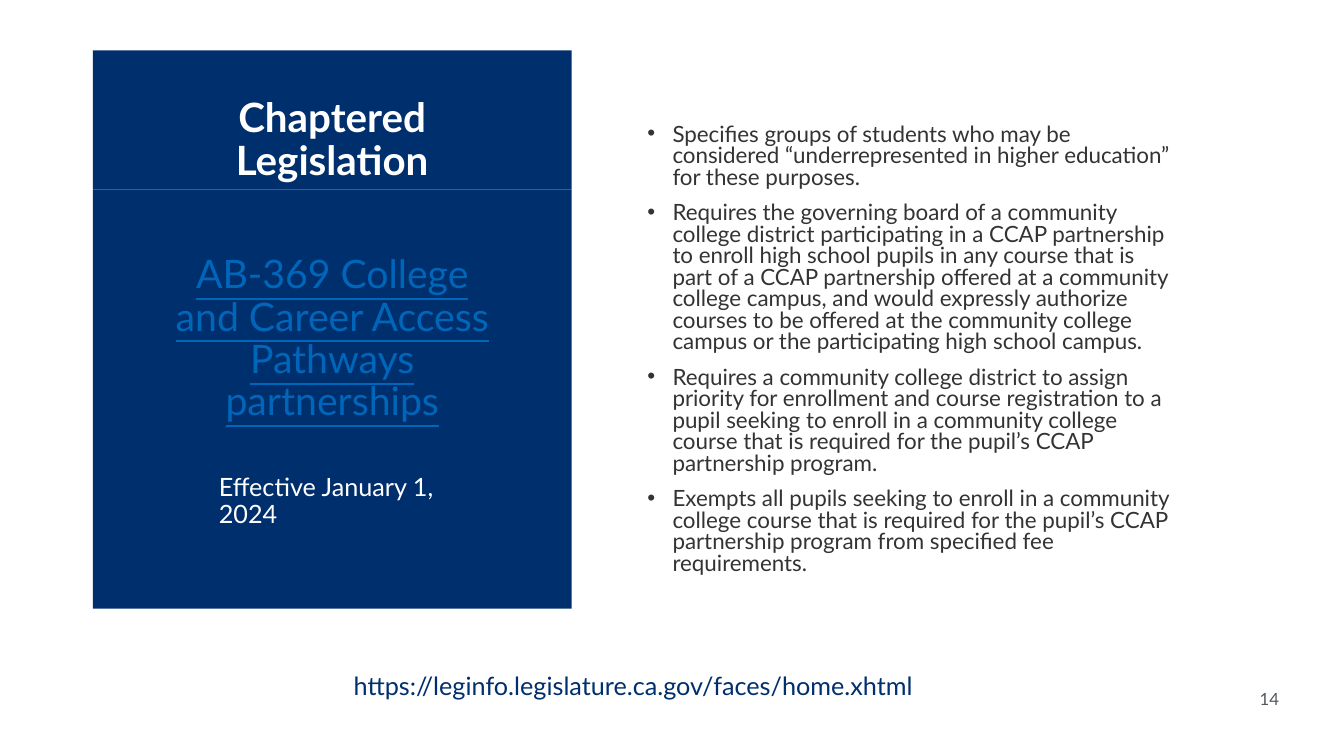
"""Build the chaptered legislation slide for AB-369."""
from lxml import etree
from pptx import Presentation
from pptx.dml.color import RGBColor
from pptx.enum.text import MSO_ANCHOR, MSO_AUTO_SIZE, PP_ALIGN
from pptx.oxml.ns import qn
from pptx.util import Inches, Pt

TITLE = "Chaptered Legislation"
BILL = "AB-369 College and Career Access Pathways partnerships"
EFFECTIVE = "Effective January 1, 2024"
POINTS = [
    "Specifies groups of students who may be considered “underrepresented in higher education” for these purposes.",
    "Requires the governing board of a community college district participating in a CCAP partnership "
    "to enroll high school pupils in any course that is part of a CCAP partnership offered at a community "
    "college campus, and would expressly authorize courses to be offered at the community college campus "
    "or the participating high school campus.",
    "Requires a community college district to assign priority for enrollment and course registration to a "
    "pupil seeking to enroll in a community college course that is required for the pupil’s CCAP "
    "partnership program.",
    "Exempts all pupils seeking to enroll in a community college course that is required for the pupil’s "
    "CCAP partnership program from specified fee requirements.",
]
URL = "https://leginfo.legislature.ca.gov/faces/home.xhtml"
PAGE = "14"

FONT = "Lato"
NAVY = RGBColor(0x00, 0x2F, 0x6D)
BLUE = RGBColor(0x00, 0x66, 0xBA)
WHITE = RGBColor(0xFF, 0xFF, 0xFF)
DARK = RGBColor(0x33, 0x33, 0x33)
GRAY = RGBColor(0x53, 0x57, 0x5A)

PANEL_LEFT, PANEL_TOP, PANEL_WIDTH = 0.92, 0.5, 4.75
TITLE_HEIGHT, BILL_HEIGHT = 1.38, 4.16
BILL_TOP = PANEL_TOP + TITLE_HEIGHT
POINTS_TOP = 1.19
POINTS_HEIGHT = BILL_TOP + BILL_HEIGHT - POINTS_TOP


def place(sp, left, top, width, height, insets=(0.1, 0.05, 0.1, 0.05), anchor=MSO_ANCHOR.TOP, fill=None):
    """Position a shape and prepare its text frame."""
    sp.left, sp.top, sp.width, sp.height = map(Inches, (left, top, width, height))
    if fill is not None:
        sp.fill.solid()
        sp.fill.fore_color.rgb = fill
    tf = sp.text_frame
    tf.word_wrap = True
    tf.auto_size = MSO_AUTO_SIZE.NONE
    tf.vertical_anchor = anchor
    tf.margin_left, tf.margin_top, tf.margin_right, tf.margin_bottom = map(Inches, insets)
    return tf


def write(p, text, size, color, align=PP_ALIGN.LEFT, spacing=1.0, before=0, bold=False, underline=False):
    """Format a paragraph and add its run."""
    p.alignment = align
    p.line_spacing = spacing
    p.space_before = Pt(before)
    r = p.add_run()
    r.text = text
    r.font.name = FONT
    r.font.size = Pt(size)
    r.font.color.rgb = color
    r.font.bold = bold
    r.font.underline = underline


def indent(p, margin, first=0.0, bullet=None):
    """Set paragraph indents and an optional bullet."""
    pPr = p._p.get_or_add_pPr()
    pPr.set("marL", str(Inches(margin)))
    pPr.set("indent", str(Inches(first)))
    if bullet:
        etree.SubElement(pPr, qn("a:buFont")).set("typeface", "Arial")
        etree.SubElement(pPr, qn("a:buChar")).set("char", bullet)


def main():
    """Create and save the slide."""
    prs = Presentation()
    prs.slide_width, prs.slide_height = Inches(13.33), Inches(7.5)
    s = prs.slides.add_slide(prs.slide_layouts[5])

    tf = place(s.shapes.title, PANEL_LEFT, PANEL_TOP, PANEL_WIDTH, TITLE_HEIGHT,
               (0.5, 0.5, 0.5, 0.05), MSO_ANCHOR.BOTTOM, NAVY)
    write(tf.paragraphs[0], TITLE, 28.8, WHITE, PP_ALIGN.CENTER, 0.9, bold=True)

    tf = place(s.shapes.add_textbox(0, 0, 0, 0), PANEL_LEFT, BILL_TOP, PANEL_WIDTH, BILL_HEIGHT,
               (0.75, 0.65, 0.75, 0.25), fill=NAVY)
    write(tf.paragraphs[0], BILL, 28, BLUE, PP_ALIGN.CENTER, 0.9, underline=True)
    p = tf.add_paragraph()
    indent(p, 0.5)
    write(p, EFFECTIVE, 18, WHITE, spacing=0.9, before=36)

    tf = place(s.shapes.add_textbox(0, 0, 0, 0), PANEL_LEFT + PANEL_WIDTH, POINTS_TOP, 6.75, POINTS_HEIGHT,
               (0.75, 0.05, 0.75, 0.25))
    for i, point in enumerate(POINTS):
        p = tf.add_paragraph() if i else tf.paragraphs[0]
        indent(p, 0.25, -0.25, "•")
        write(p, point, 16, DARK, spacing=0.8, before=10 if i else 0)

    tf = place(s.shapes.add_textbox(0, 0, 0, 0), 12.39, 6.73, 0.4, 0.4,
               (0, 0, 0, 0), MSO_ANCHOR.MIDDLE, WHITE)
    write(tf.paragraphs[0], PAGE, 12, GRAY, PP_ALIGN.CENTER)

    tf = place(s.shapes.add_textbox(0, 0, 0, 0), 3.41, 6.6, 6.67, 0.4)
    write(tf.paragraphs[0], URL, 18, NAVY)

    prs.save("out.pptx")


if __name__ == "__main__":
    main()
